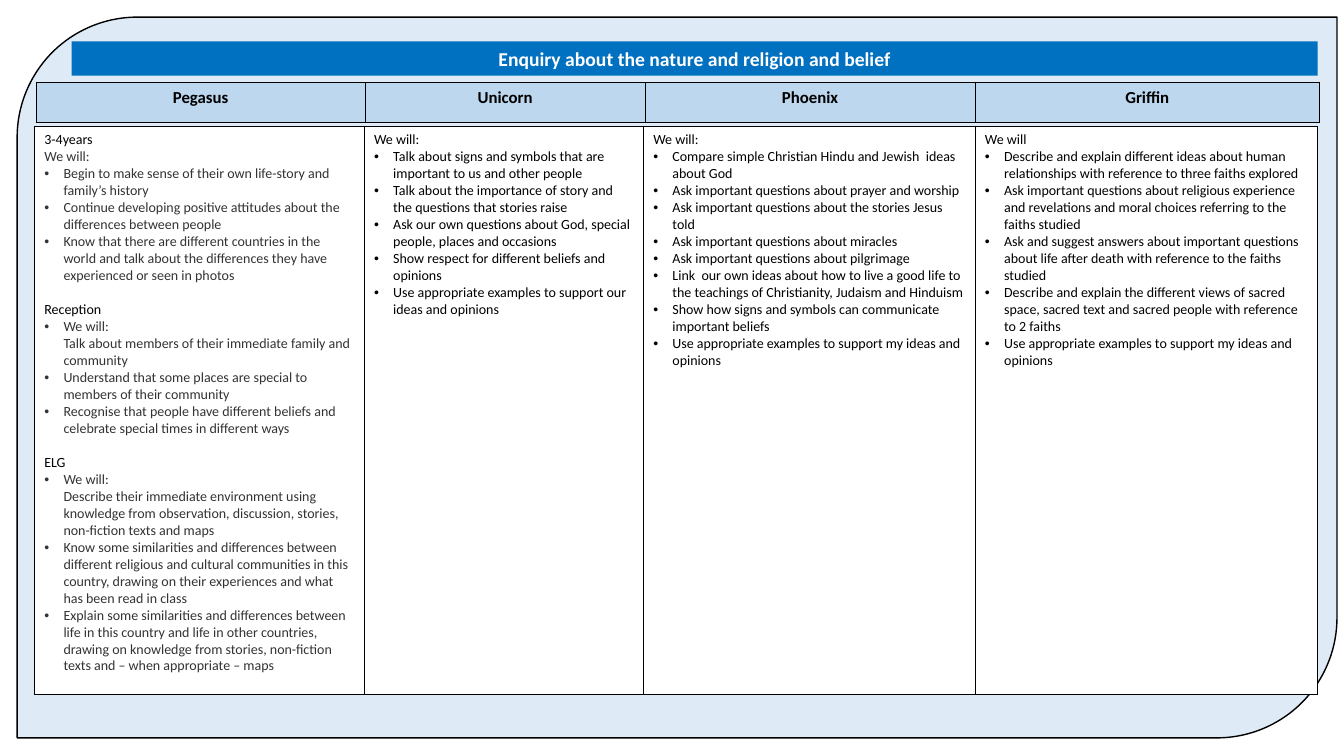
"""Build a slide on religious enquiry skills for four class groups."""
from copy import deepcopy

from lxml import etree
from pptx import Presentation
from pptx.dml.color import RGBColor
from pptx.enum.shapes import MSO_SHAPE
from pptx.enum.text import MSO_ANCHOR, MSO_AUTO_SIZE, PP_ALIGN
from pptx.oxml.ns import qn
from pptx.util import Inches, Pt

CENTER, LEFT = PP_ALIGN.CENTER, PP_ALIGN.LEFT
TOP, MIDDLE = MSO_ANCHOR.TOP, MSO_ANCHOR.MIDDLE
PANEL_SHAPE = MSO_SHAPE.ROUND_2_DIAG_RECTANGLE
FIXED_SIZE = MSO_AUTO_SIZE.NONE
BLACK, GREY, WHITE = "000000", "333333", "FFFFFF"
PANEL_BLUE, TITLE_BLUE, HEADER_BLUE = "DEEBF7", "0070C0", "BDD7EE"
FONT = "Calibri"
SECTION_GAP = 12.2

TITLE = "Enquiry about the nature and religion and belief"
GROUPS = ["Pegasus", "Unicorn", "Phoenix", "Griffin"]
HEADER_WIDTHS = [3.26, 2.78, 3.27, 3.42]
BODY_WIDTHS = [3.27, 2.77, 3.29, 3.4]

PEGASUS = [
    (["3-4years", "We will:"], [
        "Begin to make sense of their own life-story and family’s history",
        "Continue developing positive attitudes about the differences between people",
        "Know that there are different countries in the world and talk about the "
        "differences they have experienced or seen in photos",
    ]),
    (["Reception"], [
        "We will:\nTalk about members of their immediate family and community",
        "Understand that some places are special to members of their community",
        "Recognise that people have different beliefs and celebrate special times "
        "in different ways",
    ]),
    (["ELG"], [
        "We will:\nDescribe their immediate environment using knowledge from "
        "observation, discussion, stories, non-fiction texts and maps",
        "Know some similarities and differences between different religious and "
        "cultural communities in this country, drawing on their experiences and "
        "what has been read in class",
        "Explain some similarities and differences between life in this country and "
        "life in other countries, drawing on knowledge from stories, non-fiction "
        "texts and – when appropriate – maps",
    ]),
]
UNICORN = [
    (["We will:"], [
        "Talk about signs and symbols that are important to us and other people",
        "Talk about the importance of story and the questions that stories raise",
        "Ask our own questions about God, special people, places and occasions",
        "Show respect for different beliefs and opinions",
        "Use appropriate examples to support our ideas and opinions",
    ]),
]
PHOENIX = [
    (["We will:"], [
        "Compare simple Christian Hindu and Jewish  ideas about God",
        "Ask important questions about prayer and worship",
        "Ask important questions about the stories Jesus told",
        "Ask important questions about miracles",
        "Ask important questions about pilgrimage",
        "Link  our own ideas about how to live a good life to the teachings of "
        "Christianity, Judaism and Hinduism",
        "Show how signs and symbols can communicate important beliefs",
        "Use appropriate examples to support my ideas and opinions",
    ]),
]
GRIFFIN = [
    (["We will"], [
        "Describe and explain different ideas about human relationships with "
        "reference to three faiths explored",
        "Ask important questions about religious experience and revelations and "
        "moral choices referring to the faiths studied",
        "Ask and suggest answers about important questions about life after death "
        "with reference to the faiths studied",
        "Describe and explain the different views of sacred space, sacred text and "
        "sacred people with reference to 2 faiths",
        "Use appropriate examples to support my ideas and opinions",
    ]),
]
SKILLS = [(PEGASUS, GREY), (UNICORN, BLACK), (PHOENIX, BLACK), (GRIFFIN, BLACK)]


def paint(target, color):
    """Give a fill, or the fill of a font, one solid colour."""
    target.solid()
    target.fore_color.rgb = RGBColor.from_string(color)


def add_text(frame, text, size=10, color=BLACK, bold=False, align=LEFT,
             bullet=False, before=0):
    """Write one formatted paragraph, filling the empty first one if there is one."""
    para = frame.paragraphs[-1]
    if para.runs:
        para = frame.add_paragraph()
    para.text = text.replace("\n", "\v")
    para.alignment = align
    para.space_before = Pt(before)
    if bullet:
        settings = para._p.get_or_add_pPr()
        settings.set("marL", str(Inches(0.19)))
        settings.set("indent", str(-Inches(0.19)))
        etree.SubElement(settings, qn("a:buFont")).set("typeface", "Arial")
        etree.SubElement(settings, qn("a:buChar")).set("char", "•")
    for span in para.runs:
        span.font.name, span.font.size, span.font.bold = FONT, Pt(size), bold
        paint(span.font.fill, color)
    for line_break in para._p.findall(qn("a:br")):
        line_break.insert(0, deepcopy(para.runs[0].font._element))


def add_borders(cell):
    """Draw a thin black line on every side of a cell."""
    settings = cell._tc.get_or_add_tcPr()
    for position, side in enumerate(("lnL", "lnR", "lnT", "lnB")):
        line = etree.Element(qn("a:" + side), w=str(Pt(0.5)))
        fill = etree.SubElement(line, qn("a:solidFill"))
        etree.SubElement(fill, qn("a:srgbClr")).set("val", BLACK)
        settings.insert(position, line)


def add_row_table(page, left, top, height, widths, color):
    """Add a bordered table of one row and return its cells."""
    table = page.shapes.add_table(
        1, len(widths), Inches(left), Inches(top),
        Inches(sum(widths)), Inches(height)).table
    table.first_row = table.horz_banding = False
    table.rows[0].height = Inches(height)
    for column, width in zip(table.columns, widths):
        column.width = Inches(width)
    cells = list(table.rows[0].cells)
    for cell in cells:
        cell.vertical_anchor = TOP
        paint(cell.fill, color)
        add_borders(cell)
    return cells


def add_skills(frame, sections, color):
    """Write the headed bullet lists of one group."""
    for number, (headings, skills) in enumerate(sections):
        for position, heading in enumerate(headings):
            first = position == 0
            add_text(frame, heading, color=BLACK if first else color,
                     before=SECTION_GAP if first and number else 0)
        for skill in skills:
            add_text(frame, skill, color=color, bullet=True)


def main():
    """Lay out the panel, title bar and two tables."""
    deck = Presentation()
    deck.slide_width, deck.slide_height = Inches(13.33), Inches(7.5)
    page = deck.slides.add_slide(deck.slide_layouts[5])

    panel = page.shapes.add_shape(
        PANEL_SHAPE, Inches(0.17), Inches(0.17), Inches(13.09), Inches(7.15))
    panel.shadow.inherit = False
    paint(panel.fill, PANEL_BLUE)
    paint(panel.line.fill, BLACK)
    panel.line.width = Pt(1)

    title = page.shapes.title
    title.element.addprevious(panel.element)
    title.left, title.top = Inches(0.71), Inches(0.41)
    title.width, title.height = Inches(12.36), Inches(0.34)
    paint(title.fill, TITLE_BLUE)
    frame = title.text_frame
    frame.auto_size, frame.vertical_anchor, frame.word_wrap = FIXED_SIZE, MIDDLE, True
    add_text(frame, TITLE, size=14, color=WHITE, bold=True, align=CENTER)

    headers = add_row_table(page, 0.36, 0.82, 0.39, HEADER_WIDTHS, HEADER_BLUE)
    for cell, group in zip(headers, GROUPS):
        add_text(cell.text_frame, group, size=12, bold=True, align=CENTER)

    bodies = add_row_table(page, 0.34, 1.25, 5.64, BODY_WIDTHS, WHITE)
    for cell, (sections, color) in zip(bodies, SKILLS):
        add_skills(cell.text_frame, sections, color)

    deck.save("out.pptx")


if __name__ == "__main__":
    main()
